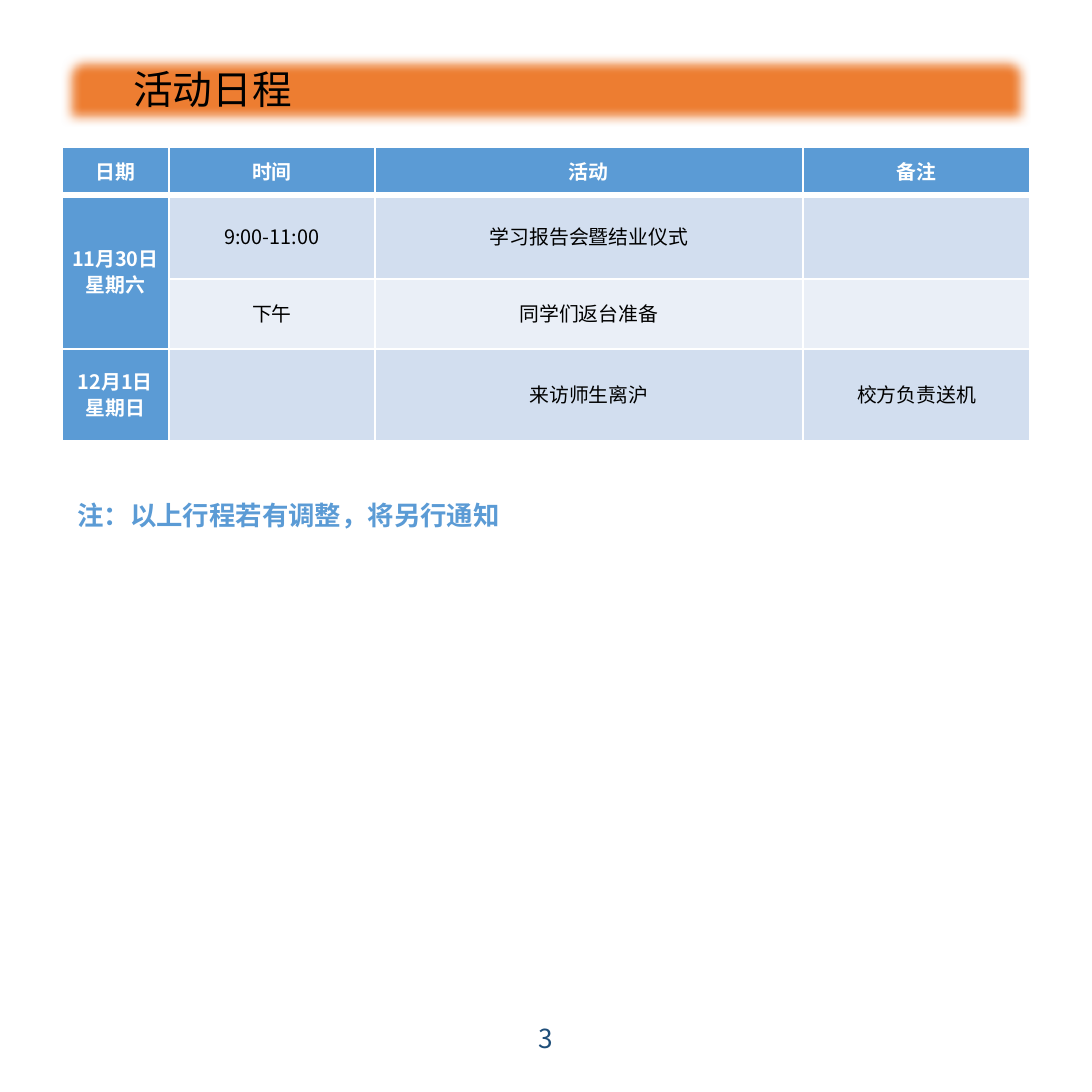
"""Build the activity schedule slide."""
import lxml.etree
import pptx
import pptx.dml.color
import pptx.enum.shapes
import pptx.enum.text
import pptx.oxml
import pptx.oxml.ns
import pptx.util

Pt = pptx.util.Pt
RGBColor = pptx.dml.color.RGBColor
ANCHOR = pptx.enum.text.MSO_ANCHOR
ALIGN = pptx.enum.text.PP_ALIGN
qn = pptx.oxml.ns.qn

FONT = "Noto Sans CJK SC"
BLACK = RGBColor(0x00, 0x00, 0x00)
WHITE = RGBColor(0xFF, 0xFF, 0xFF)
ORANGE = RGBColor(0xED, 0x7D, 0x31)
BLUE = RGBColor(0x5B, 0x9B, 0xD5)
NAVY = RGBColor(0x1F, 0x4E, 0x79)
BANDS = [RGBColor(0xD2, 0xDE, 0xEF), RGBColor(0xEA, 0xEF, 0xF7)]

SIDE = 496.1
LEFT = 28.1
WIDTH = 440


def add_run(p, text, size, color, bold=False, align=ALIGN.CENTER):
    p.alignment = align
    r = p.add_run()
    r.text = text
    r.font.size = Pt(size)
    r.font.bold = bold
    r.font.color.rgb = color
    r.font.name = FONT
    lxml.etree.SubElement(r.font._element, qn("a:ea"), typeface=FONT)


def set_borders(cell, widths):
    tcPr = cell._tc.get_or_add_tcPr()
    for i, (side, width) in enumerate(zip("LRTB", widths)):
        ln = lxml.etree.Element(qn("a:ln" + side), w=str(Pt(width)))
        fill = lxml.etree.SubElement(ln, qn("a:solidFill"))
        lxml.etree.SubElement(fill, qn("a:srgbClr"), val=str(WHITE))
        tcPr.insert(i, ln)


prs = pptx.Presentation()
prs.slide_width = prs.slide_height = Pt(SIDE)
s = prs.slides.add_slide(prs.slide_layouts[5])

bar = s.shapes.add_shape(
    pptx.enum.shapes.MSO_SHAPE.ROUND_2_SAME_RECTANGLE,
    Pt(LEFT), Pt(24.5), Pt(WIDTH), Pt(33.1))
bar.shadow.inherit = False
bar.fill.solid()
bar.fill.fore_color.rgb = ORANGE
bar.line.fill.background()
effects = bar._element.spPr.find(qn("a:effectLst"))
lxml.etree.SubElement(effects, qn("a:softEdge"), rad=str(Pt(5)))

title = s.shapes.title
bar._element.addnext(title._element)
title.left, title.top, title.width, title.height = Pt(53.3), Pt(25.9), Pt(87.1), Pt(28.8)
tf = title.text_frame
tf.auto_size = pptx.enum.text.MSO_AUTO_SIZE.NONE
tf.word_wrap = False
tf.vertical_anchor = ANCHOR.TOP
add_run(tf.paragraphs[0], "活动日程", 18, BLACK, align=ALIGN.LEFT)

note = s.shapes.add_textbox(Pt(LEFT), Pt(223.2), Pt(208.1), Pt(21.6))
note.text_frame.word_wrap = False
add_run(note.text_frame.paragraphs[0], "注：以上行程若有调整，将另行通知",
        12, BLUE, bold=True, align=ALIGN.LEFT)

number = s.shapes.add_textbox(0, Pt(461), Pt(SIDE), Pt(21.6))
number.text_frame.word_wrap = True
number.text_frame.vertical_anchor = ANCHOR.MIDDLE
add_run(number.text_frame.paragraphs[0], "3", 11.9, NAVY)

schedule = [
    ["日期", "时间", "活动", "备注"],
    ["11月30日\n星期六", "9:00-11:00", "学习报告会暨结业仪式", ""],
    ["", "下午", "同学们返台准备", ""],
    ["12月1日\n星期日", "", "来访师生离沪", "校方负责送机"],
]
col_widths = [48.6, 93.6, 194.4, 103.4]
row_heights = [21.7, 38.2, 31.7, 41.6]

table = s.shapes.add_table(
    len(row_heights), len(col_widths), Pt(LEFT), Pt(67),
    Pt(WIDTH), Pt(sum(row_heights))).table
for col, width in zip(table.columns, col_widths):
    col.width = Pt(width)
for row, height in zip(table.rows, row_heights):
    row.height = Pt(height)
table.cell(1, 0).merge(table.cell(2, 0))

for i, texts in enumerate(schedule):
    for j, text in enumerate(texts):
        cell = table.cell(i, j)
        heading = i == 0 or j == 0
        cell.vertical_anchor = ANCHOR.MIDDLE
        cell.margin_left = cell.margin_right = Pt(2.9)
        cell.margin_top = cell.margin_bottom = 0
        cell.fill.solid()
        cell.fill.fore_color.rgb = BLUE if heading else BANDS[(i - 1) % 2]
        set_borders(cell, [1, 1, 3 if i == 1 else 1, 3 if i == 0 else 1])
        tf = cell.text_frame
        for k, line in enumerate(text.split("\n")):
            p = tf.add_paragraph() if k else tf.paragraphs[0]
            p.font.size = Pt(9)
            if i:
                p.line_spacing = Pt(12)
            if line:
                add_run(p, line, 9, WHITE if heading else BLACK, bold=heading)

prs.save("out.pptx")
